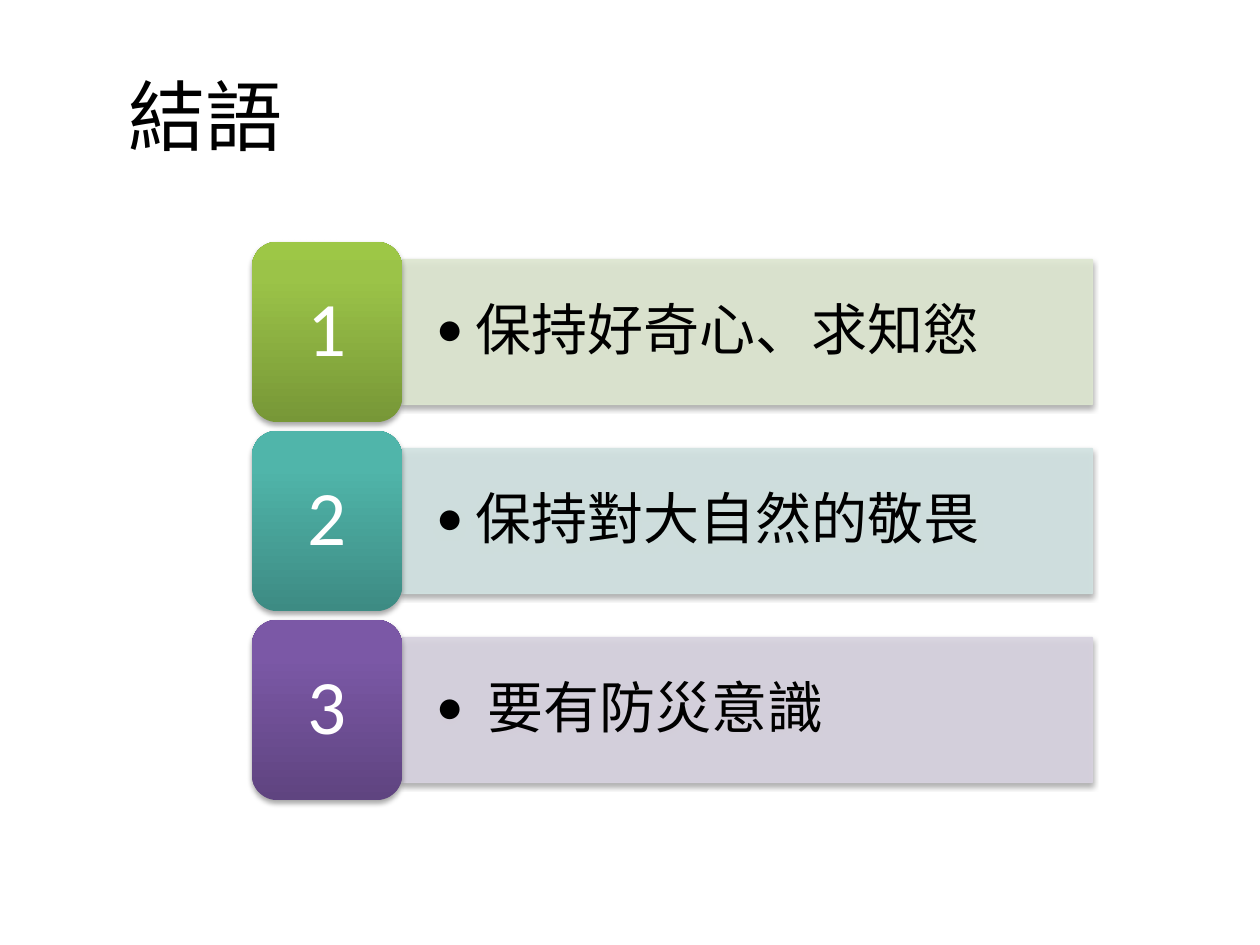
"""Build a closing slide with three numbered, colour-coded takeaways."""
from dataclasses import dataclass

from lxml import etree
from pptx import Presentation
from pptx.dml.color import RGBColor
from pptx.enum.shapes import MSO_SHAPE
from pptx.enum.text import MSO_ANCHOR, PP_ALIGN
from pptx.oxml.ns import qn
from pptx.util import Inches, Pt

RECT, ROUND = MSO_SHAPE.RECTANGLE, MSO_SHAPE.ROUNDED_RECTANGLE
MIDDLE = MSO_ANCHOR.MIDDLE
LEFT, CENTER = PP_ALIGN.LEFT, PP_ALIGN.CENTER
BLACK = RGBColor(0x00, 0x00, 0x00)
WHITE = RGBColor(0xFF, 0xFF, 0xFF)
FONT = "Calibri"
WIDTH, HEIGHT = 10, 7.5
TOP, PITCH = 1.92, 1.5
TILE_LEFT, TILE_W, TILE_H = 0.2 * WIDTH, 1.19, 1.43
PANEL_LEFT, PANEL_W, PANEL_H = TILE_LEFT + TILE_W, 5.48, 1.15
STOPS = (0, 80, 100)


@dataclass
class Takeaway:
    """One row: its text, panel colour and tile gradient from bottom to top."""
    text: str
    panel: RGBColor
    tile: tuple[RGBColor, RGBColor, RGBColor]


TAKEAWAYS = [
    Takeaway("保持好奇心、求知慾", RGBColor(0xDE, 0xE7, 0xD1),
             (RGBColor(0x77, 0x97, 0x37), RGBColor(0x9B, 0xC3, 0x48), RGBColor(0x9D, 0xC7, 0x46))),
    Takeaway("保持對大自然的敬畏", RGBColor(0xD2, 0xE3, 0xE2),
             (RGBColor(0x3D, 0x8B, 0x83), RGBColor(0x50, 0xB5, 0xAA), RGBColor(0x4E, 0xB8, 0xAC))),
    Takeaway(" 要有防災意識", RGBColor(0xD8, 0xD3, 0xE0),
             (RGBColor(0x5F, 0x44, 0x80), RGBColor(0x7B, 0x58, 0xA6), RGBColor(0x7C, 0x57, 0xA8))),
]


def add_child(parent, tag: str, **attrs):
    """Append a DrawingML element with the given attributes."""
    return etree.SubElement(parent, qn(tag), {k: str(v) for k, v in attrs.items()})


def set_attrs(target, values: dict) -> None:
    """Set each named value on the target."""
    for name, value in values.items():
        setattr(target, name, value)


def add_box(s, kind, left: float, top: float, width: float, height: float):
    """Add a shape with a soft shadow below it."""
    sp = s.shapes.add_shape(kind, *map(Inches, (left, top, width, height)))
    sp.shadow.inherit = False
    effects = sp._element.spPr.find(qn("a:effectLst"))
    shadow = add_child(effects, "a:outerShdw", blurRad=Pt(3.1), dist=Pt(1.8),
                       dir=90 * 60000, rotWithShape=0)
    add_child(add_child(shadow, "a:srgbClr", val=BLACK), "a:alpha", val=35000)
    return sp


def write(sp, text: str, size: int, color: RGBColor, align, inset: float = 0.1,
          bullet: bool = False) -> None:
    """Fill a shape with one formatted paragraph."""
    tf = sp.text_frame
    set_attrs(tf, {
        "word_wrap": True, "vertical_anchor": MIDDLE,
        "margin_left": Inches(inset), "margin_right": Inches(inset),
        "margin_top": Inches(inset / 2), "margin_bottom": Inches(inset / 2),
    })
    p = tf.paragraphs[0]
    set_attrs(p, {"alignment": align, "line_spacing": 0.9})
    if bullet:
        pPr = p._p.get_or_add_pPr()
        pPr.set("marL", str(Inches(0.31)))
        pPr.set("indent", str(Inches(-0.31)))
        add_child(pPr, "a:buFont", typeface=FONT)
        add_child(pPr, "a:buChar", char="•")
    r = p.add_run()
    r.text = text
    set_attrs(r.font, {"size": Pt(size), "name": FONT})
    r.font.color.rgb = color


def add_panel(s, item: Takeaway, top: float) -> None:
    """Draw the translucent text panel of a row."""
    sp = add_box(s, RECT, PANEL_LEFT, top + (TILE_H - PANEL_H) / 2, PANEL_W, PANEL_H)
    sp.fill.solid()
    sp.fill.fore_color.rgb = item.panel
    sp.line.color.rgb = item.panel
    sp.line.width = Pt(0.75)
    for color in sp._element.spPr.findall(".//" + qn("a:solidFill") + "/" + qn("a:srgbClr")):
        add_child(color, "a:alpha", val=90000)
    write(sp, item.text, 32, BLACK, LEFT, 0.27, True)


def add_tile(s, item: Takeaway, number: int, top: float) -> None:
    """Draw the rounded number tile of a row."""
    sp = add_box(s, ROUND, TILE_LEFT, top, TILE_W, TILE_H)
    sp.line.fill.background()
    sp.fill.gradient()
    sp.fill.gradient_angle = 90
    stops = sp._element.spPr.find(".//" + qn("a:gsLst"))
    for stop in list(stops):
        stops.remove(stop)
    for share, color in zip(STOPS, item.tile):
        add_child(add_child(stops, "a:gs", pos=share * 1000), "a:srgbClr", val=color)
    write(sp, str(number), 44, WHITE, CENTER, 0.18)


def main() -> None:
    """Build and save the slide."""
    prs = Presentation()
    prs.slide_width, prs.slide_height = Inches(WIDTH), Inches(HEIGHT)
    s = prs.slides.add_slide(prs.slide_layouts[5])
    title = s.shapes.title
    set_attrs(title, {"left": Inches(0.92), "top": Inches(0.33),
                      "width": Inches(8.83), "height": Inches(1.25)})
    write(title, "結語", 44, BLACK, LEFT)
    for row, item in enumerate(TAKEAWAYS):
        top = TOP + row * PITCH
        add_panel(s, item, top)
        add_tile(s, item, row + 1, top)
    prs.save("out.pptx")


if __name__ == "__main__":
    main()
